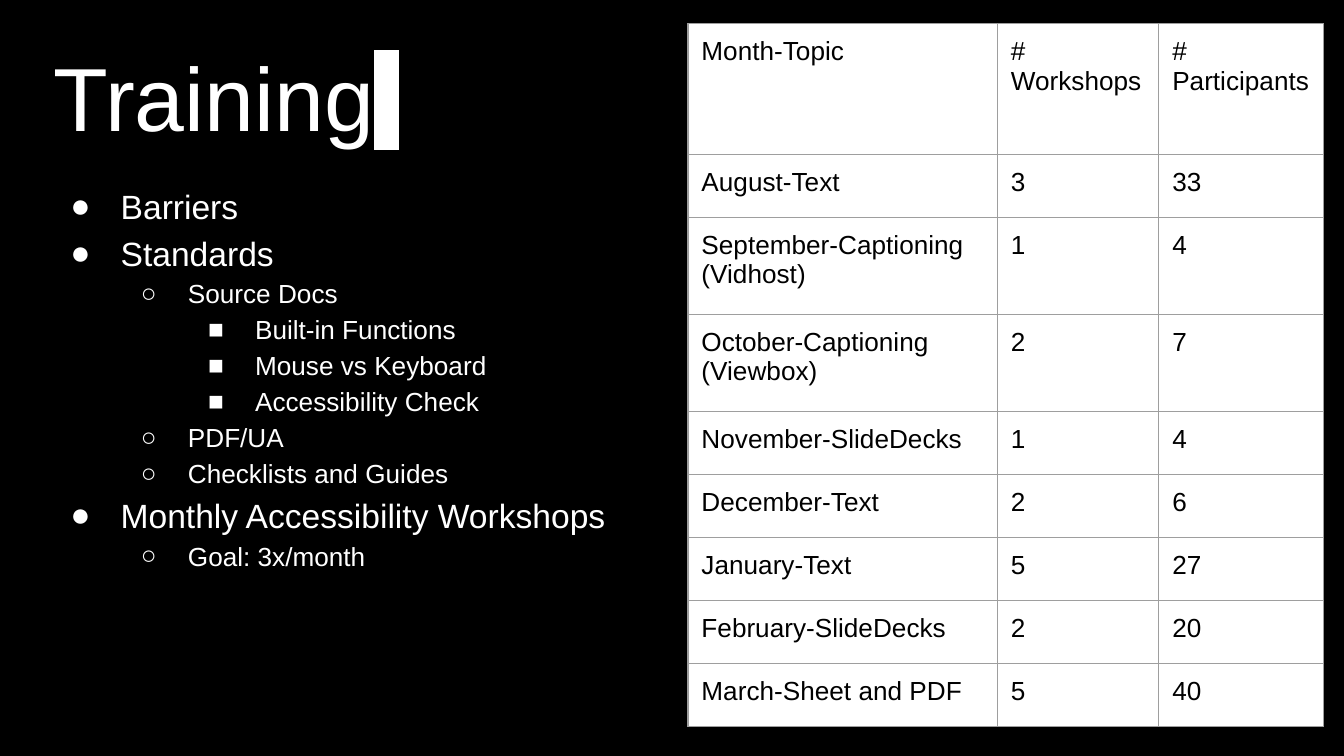
from lxml.etree import SubElement
from pptx import Presentation
from pptx.dml.color import RGBColor
from pptx.enum.text import MSO_ANCHOR, MSO_AUTO_SIZE, PP_ALIGN
from pptx.oxml import parse_xml
from pptx.oxml.ns import nsdecls, qn
from pptx.util import Pt

FONT, BLACK, WHITE, GRAY = "Arial", "000000", "FFFFFF", "9E9E9E"
INSET = 7.2

TITLE = "Training"
OUTLINE = [
    (0, "Barriers"),
    (0, "Standards"),
    (1, "Source Docs"),
    (2, "Built-in Functions"),
    (2, "Mouse vs Keyboard"),
    (2, "Accessibility Check"),
    (1, "PDF/UA"),
    (1, "Checklists and Guides"),
    (0, "Monthly Accessibility Workshops"),
    (1, "Goal: 3x/month"),
]
# Bullet, text size and hanging indent for each level
LEVELS = [("●", 18, 27), ("○", 14, 25.2), ("■", 14, 25.2)]

WORKSHOPS = [
    ("Month-Topic", "# Workshops", "# Participants"),
    ("August-Text", "3", "33"),
    ("September-Captioning (Vidhost)", "1", "4"),
    ("October-Captioning (Viewbox)", "2", "7"),
    ("November-SlideDecks", "1", "4"),
    ("December-Text", "2", "6"),
    ("January-Text", "5", "27"),
    ("February-SlideDecks", "2", "20"),
    ("March-Sheet and PDF", "5", "40"),
]
COL_WIDTHS = [165.75, 86.5, 88.4]
HEADER_H, ROW_H, TALL_ROW_H = 70, 33.75, 52


def rgb(color):
    return RGBColor.from_string(color)


def add_text(p, text, size=14, color=WHITE):
    r = p.add_run()
    r.text = text
    r.font.size, r.font.name = Pt(size), FONT
    r.font.color.rgb = rgb(color)
    return r


def set_frame(tf, anchor):
    tf.word_wrap, tf.auto_size = True, MSO_AUTO_SIZE.NONE
    tf.vertical_anchor = anchor
    tf.margin_left = tf.margin_right = tf.margin_top = tf.margin_bottom = Pt(INSET)


def highlight(r, color):
    mark = parse_xml(f'<a:highlight {nsdecls("a")}><a:srgbClr val="{color}"/></a:highlight>')
    r.font._element.find(qn("a:solidFill")).addnext(mark)


def add_bullet(p, level):
    char, _, hang = LEVELS[level]
    p.level, p.line_spacing = level, 1.15
    p.space_before = p.space_after = Pt(0)
    pPr = p._p.get_or_add_pPr()
    pPr.set("marL", str(Pt(36 * (level + 1))))
    pPr.set("indent", str(-Pt(hang)))
    SubElement(SubElement(pPr, qn("a:buClr")), qn("a:srgbClr"), val=WHITE)
    SubElement(pPr, qn("a:buFont"), typeface=FONT)
    SubElement(pPr, qn("a:buChar"), char=char)


def set_borders(cell, color, width):
    tcPr = cell._tc.get_or_add_tcPr()
    for i, side in enumerate("LRTB"):
        tcPr.insert(i, parse_xml(
            f'<a:ln{side} {nsdecls("a")} w="{Pt(width)}"><a:solidFill>'
            f'<a:srgbClr val="{color}"/></a:solidFill></a:ln{side}>'))


def row_height(i, topic):
    if i == 0:
        return HEADER_H
    return TALL_ROW_H if "(" in topic else ROW_H


prs = Presentation()
prs.slide_width, prs.slide_height = Pt(720), Pt(405)
s = prs.slides.add_slide(prs.slide_layouts[5])
s.background.fill.solid()
s.background.fill.fore_color.rgb = rgb(BLACK)

title = s.shapes.title
title.left, title.top, title.width, title.height = Pt(21.6), Pt(13), Pt(317.5), Pt(76.3)
set_frame(title.text_frame, MSO_ANCHOR.MIDDLE)
p = title.text_frame.paragraphs[0]
p.alignment = PP_ALIGN.LEFT
add_text(p, TITLE, size=48)
highlight(add_text(p, " ", size=48), WHITE)

heights = [row_height(i, row[0]) for i, row in enumerate(WORKSHOPS)]
table = s.shapes.add_table(len(heights), len(COL_WIDTHS), Pt(368.6), Pt(12.7),
                           Pt(sum(COL_WIDTHS)), Pt(sum(heights))).table
for column, width in zip(table.columns, COL_WIDTHS):
    column.width = Pt(width)
for row, height, values in zip(table.rows, heights, WORKSHOPS):
    row.height = Pt(height)
    for cell, value in zip(row.cells, values):
        cell.margin_left = cell.margin_right = Pt(INSET)
        cell.margin_top = cell.margin_bottom = Pt(INSET)
        cell.fill.solid()
        cell.fill.fore_color.rgb = rgb(WHITE)
        set_borders(cell, GRAY, 0.75)
        r = add_text(cell.text_frame.paragraphs[0], value, color=BLACK)
        r.font.bold = False

tf = s.shapes.add_textbox(Pt(21.6), Pt(89.3), Pt(329), Pt(260)).text_frame
set_frame(tf, MSO_ANCHOR.TOP)
for i, (level, text) in enumerate(OUTLINE):
    p = tf.add_paragraph() if i else tf.paragraphs[0]
    add_bullet(p, level)
    add_text(p, text, size=LEVELS[level][1])

prs.save("out.pptx")
